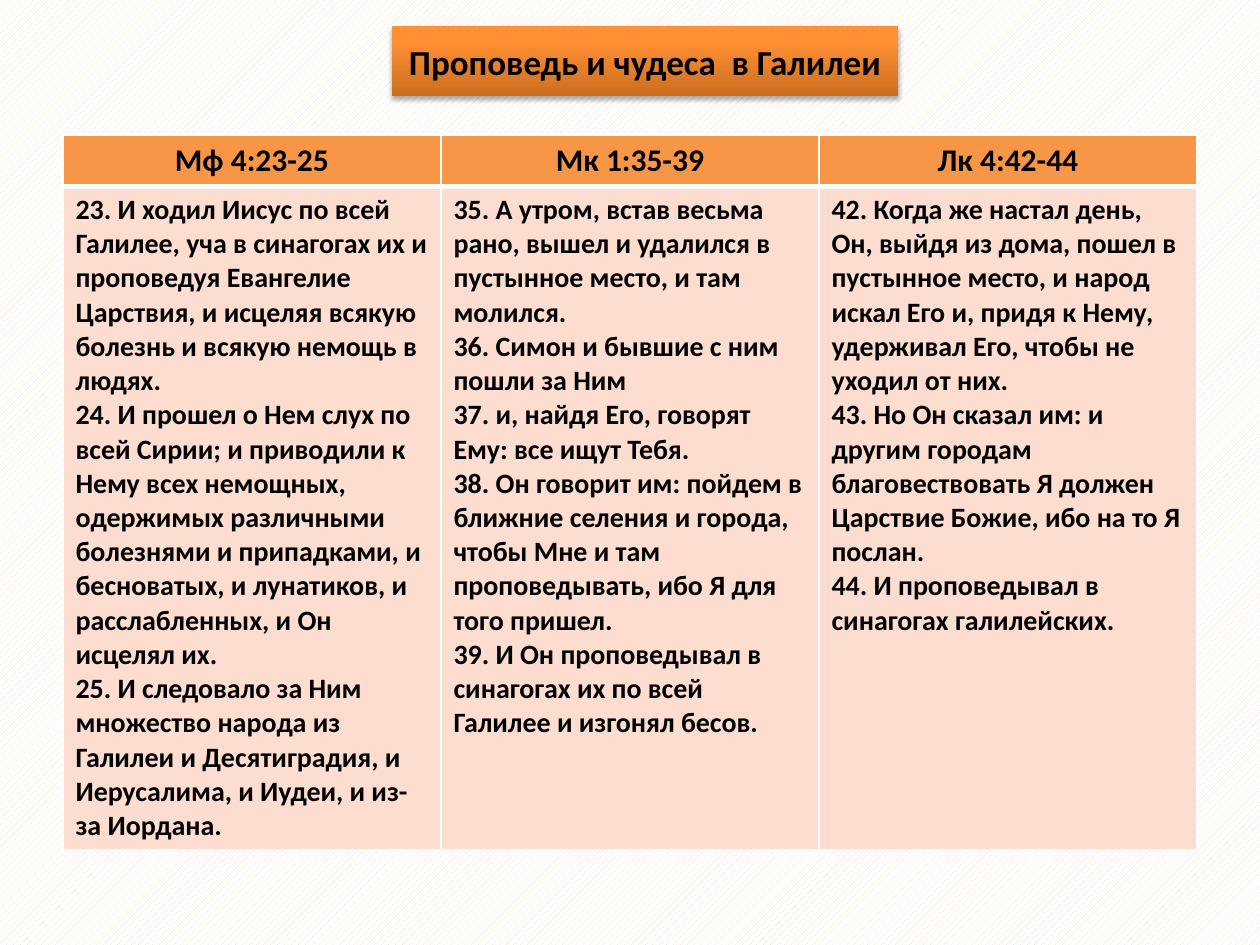
from lxml.etree import fromstring
from pptx import Presentation
from pptx.dml.color import RGBColor
from pptx.enum.dml import MSO_PATTERN
from pptx.enum.text import MSO_ANCHOR, MSO_AUTO_SIZE, PP_ALIGN
from pptx.util import Inches, Pt

NS = 'xmlns:a="http://schemas.openxmlformats.org/drawingml/2006/main"'
COLORS = {"text": "000000", "line": "FFFFFF", "header": "F79646",
          "body": "FCDDCF", "stripe": "FCD5B5", "paper": "FFFFFF"}
TITLE_STOPS = [(0, "CC6E20"), (80, "FF9034"), (100, "FF9136")]

COLUMNS = [
    ("Мф 4:23-25", [
        "23. И ходил Иисус по всей Галилее, уча в синагогах их и проповедуя Евангелие "
        "Царствия, и исцеляя всякую болезнь и всякую немощь в людях.",
        "24. И прошел о Нем слух по всей Сирии; и приводили к Нему всех немощных, "
        "одержимых различными болезнями и припадками, и бесноватых, и лунатиков, "
        "и расслабленных, и Он исцелял их.",
        "25. И следовало за Ним множество народа из Галилеи и Десятиградия, "
        "и Иерусалима, и Иудеи, и из-за Иордана.",
    ]),
    ("Мк 1:35-39", [
        "35. А утром, встав весьма рано, вышел и удалился в пустынное место, "
        "и там молился.",
        "36. Симон и бывшие с ним пошли за Ним",
        "37. и, найдя Его, говорят Ему: все ищут Тебя.",
        "38. Он говорит им: пойдем в ближние селения и города, чтобы Мне и там "
        "проповедывать, ибо Я для того пришел.",
        "39. И Он проповедывал в синагогах их по всей Галилее и изгонял бесов.",
    ]),
    ("Лк 4:42-44", [
        "42. Когда же настал день, Он, выйдя из дома, пошел в пустынное место, "
        "и народ искал Его и, придя к Нему, удерживал Его, чтобы не уходил от них.",
        "43. Но Он сказал им: и другим городам благовествовать Я должен Царствие "
        "Божие, ибо на то Я послан.",
        "44. И проповедывал в синагогах галилейских.",
    ]),
]


def write(tf, lines, size, align=PP_ALIGN.LEFT):
    """Fill a text frame with one bold paragraph per line."""
    for i, line in enumerate(lines):
        p = tf.add_paragraph() if i else tf.paragraphs[0]
        p.alignment = align
        r = p.add_run()
        r.text = line
        r.font.name = "Calibri"
        r.font.size = Pt(size)
        r.font.bold = True
        r.font.color.rgb = RGBColor.from_string(COLORS["text"])


def style_cell(cell, fill, top, bottom):
    """Set a cell's fill and its borders, widths in points."""
    tc_pr = cell._tc.get_or_add_tcPr()
    for side, width in (("L", 1), ("R", 1), ("T", top), ("B", bottom)):
        tc_pr.append(fromstring(
            f'<a:ln{side} {NS} w="{Pt(width)}"><a:solidFill>'
            f'<a:srgbClr val="{COLORS["line"]}"/></a:solidFill></a:ln{side}>'))
    cell.fill.solid()
    cell.fill.fore_color.rgb = RGBColor.from_string(COLORS[fill])


prs = Presentation()
prs.slide_width, prs.slide_height = Inches(10), Inches(7.5)
s = prs.slides.add_slide(prs.slide_layouts[5])

bg = s.background.fill
bg.patterned()
bg.pattern = MSO_PATTERN.WIDE_UPWARD_DIAGONAL
bg.fore_color.rgb = RGBColor.from_string(COLORS["stripe"])
bg.back_color.rgb = RGBColor.from_string(COLORS["paper"])

# Title: rounded bar with a gradient and a soft shadow below
title = s.shapes.title
title.left, title.top = Inches(3.11), Inches(0.21)
title.width, title.height = Inches(4.02), Inches(0.55)
stops = "".join(f'<a:gs pos="{pos * 1000}"><a:srgbClr val="{color}"/></a:gs>'
                for pos, color in TITLE_STOPS)
for xml in (
    f'<a:prstGeom {NS} prst="roundRect"><a:avLst/></a:prstGeom>',
    f'<a:gradFill {NS} rotWithShape="1"><a:gsLst>{stops}</a:gsLst>'
    '<a:lin ang="16200000" scaled="0"/></a:gradFill>',
    f'<a:ln {NS}><a:noFill/></a:ln>',
    f'<a:effectLst {NS}><a:outerShdw blurRad="{Pt(3.1)}" dist="{Pt(1.8)}" '
    'dir="5400000" rotWithShape="0"><a:srgbClr val="000000">'
    '<a:alpha val="35000"/></a:srgbClr></a:outerShdw></a:effectLst>',
):
    title._element.spPr.append(fromstring(xml))
tf = title.text_frame
tf.auto_size = MSO_AUTO_SIZE.NONE
tf.word_wrap = True
tf.vertical_anchor = MSO_ANCHOR.MIDDLE
write(tf, ["Проповедь и чудеса  в Галилеи"], 20, PP_ALIGN.CENTER)

# Parallel Gospel passages, one column each
table = s.shapes.add_table(2, len(COLUMNS), Inches(0.5), Inches(1.07),
                           Inches(9), Inches(5.57)).table
table.rows[0].height = Inches(0.41)
table.rows[1].height = Inches(5.16)
for col, (reference, verses) in enumerate(COLUMNS):
    table.columns[col].width = Inches(3)
    head, body = table.cell(0, col), table.cell(1, col)
    style_cell(head, "header", top=1, bottom=3)
    style_cell(body, "body", top=3, bottom=1)
    write(head.text_frame, [reference], 18, PP_ALIGN.CENTER)
    write(body.text_frame, verses, 16)

prs.save("out.pptx")
